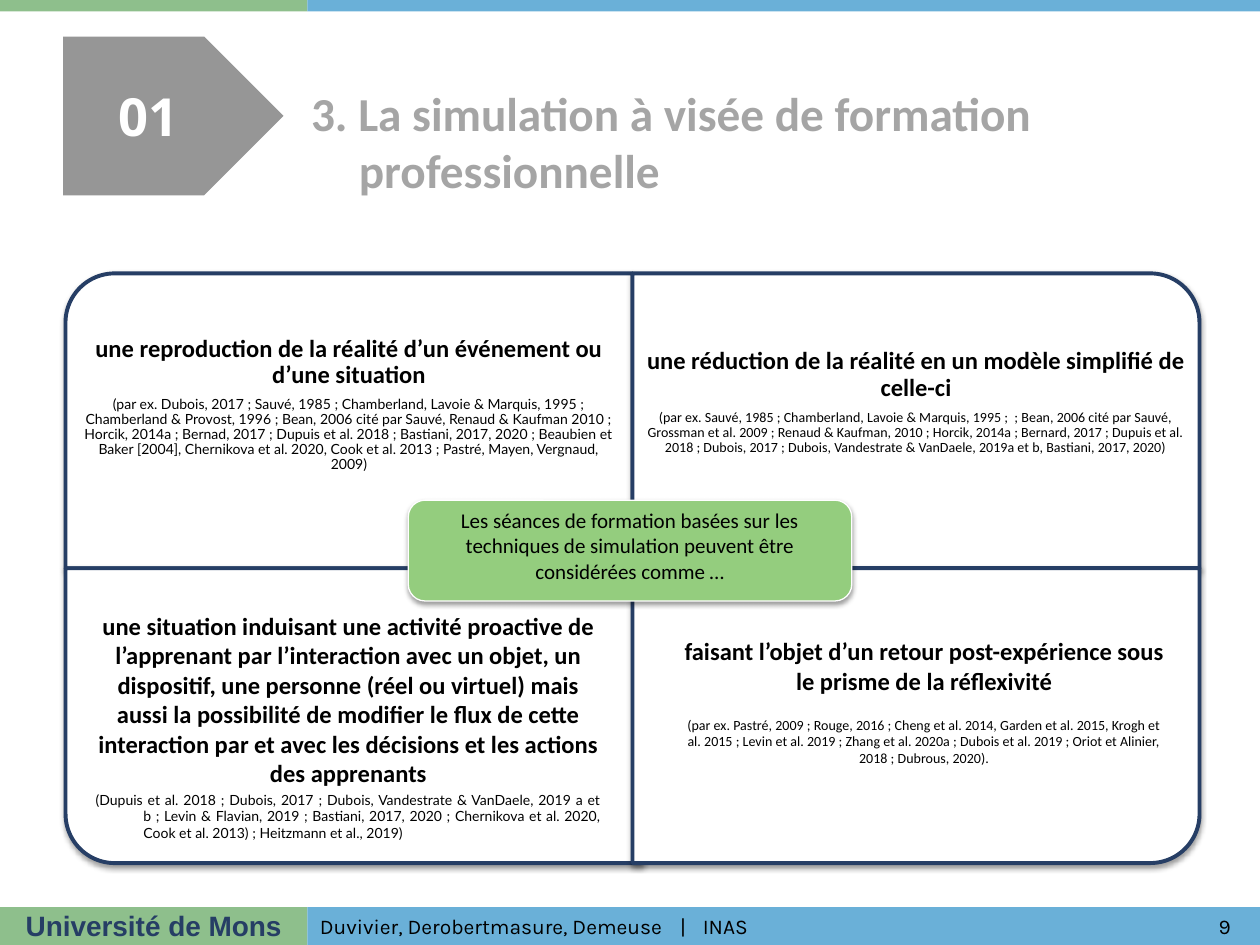
from dataclasses import dataclass

from lxml import etree
from pptx import Presentation
from pptx.dml.color import RGBColor
from pptx.enum.shapes import MSO_SHAPE
from pptx.enum.text import MSO_ANCHOR, PP_ALIGN
from pptx.oxml.ns import qn
from pptx.util import Inches, Pt

GREEN, BLUE, NAVY = "8EBF8C", "6AB0D8", "263E65"
BLACK, WHITE = "000000", "FFFFFF"
SPLIT, SLIDE_WIDTH = 2.44, 10
GRID_LEFT, GRID_TOP = 0.52, 2.17
PANEL_WIDTH, PANEL_HEIGHT = 4.5, 2.34
LEFT, CENTER, JUSTIFY = PP_ALIGN.LEFT, PP_ALIGN.CENTER, PP_ALIGN.JUSTIFY


@dataclass
class Box:
    left: float
    top: float
    width: float
    height: float

    def lengths(self):
        return [Inches(v) for v in (self.left, self.top, self.width, self.height)]


@dataclass
class Line:
    """One paragraph and its format; hang is the hanging indent in inches."""
    text: str
    size: float
    font: str = "Calibri"
    color: str = BLACK
    bold: bool = False
    align: PP_ALIGN = CENTER
    spacing: float = 1.0
    after: float = 0
    hang: float = 0
    tabs: tuple = ()


@dataclass
class Quadrant:
    column: int
    row: int
    rotation: int
    width: float = PANEL_WIDTH


def rgb(value: str) -> RGBColor:
    return RGBColor.from_string(value)


def add_shadow(shape) -> None:
    effects = etree.SubElement(shape._element.spPr, qn("a:effectLst"))
    shadow = etree.SubElement(effects, qn("a:outerShdw"), blurRad=str(Pt(3.1)),
                              dist=str(Pt(1.6)), dir="5400000", rotWithShape="0")
    color = etree.SubElement(shadow, qn("a:srgbClr"), val=BLACK)
    etree.SubElement(color, qn("a:alpha"), val="38000")


def add_block(slide, kind, box: Box, fill: str, line: str = "",
              line_width: float = 0, rotation: int = 0):
    """Draw a filled shape; an outlined one also casts a shadow."""
    shape = slide.shapes.add_shape(kind, *box.lengths())
    shape.fill.solid()
    shape.fill.fore_color.rgb = rgb(fill)
    shape.rotation = rotation
    if line:
        shape.line.color.rgb = rgb(line)
        shape.line.width = Pt(line_width)
        add_shadow(shape)
    else:
        shape.line.fill.background()
        shape.shadow.inherit = False
    return shape


def add_panel(slide, quadrant: Quadrant) -> None:
    """Draw a quadrant; a quarter turn swaps width and height about the centre."""
    width, height = quadrant.width, PANEL_HEIGHT
    center_x = GRID_LEFT + quadrant.column * PANEL_WIDTH + width / 2
    center_y = GRID_TOP + quadrant.row * PANEL_HEIGHT + height / 2
    if quadrant.rotation % 180:
        width, height = height, width
    box = Box(center_x - width / 2, center_y - height / 2, width, height)
    add_block(slide, MSO_SHAPE.ROUND_1_RECTANGLE, box, WHITE, NAVY, 2.25,
              quadrant.rotation)


def add_text(slide, box: Box, *lines: Line, anchor=MSO_ANCHOR.TOP,
             insets=(0.1, 0.05, 0.1, 0.05)) -> None:
    """Add a text box; insets are left, top, right and bottom."""
    frame = slide.shapes.add_textbox(*box.lengths()).text_frame
    frame.word_wrap = True
    frame.vertical_anchor = anchor
    (frame.margin_left, frame.margin_top,
     frame.margin_right, frame.margin_bottom) = map(Inches, insets)
    for index, line in enumerate(lines):
        paragraph = frame.add_paragraph() if index else frame.paragraphs[0]
        paragraph.alignment = line.align
        paragraph.line_spacing = line.spacing
        paragraph.space_after = Pt(line.after)
        properties = paragraph._p.get_or_add_pPr()
        if line.hang:
            properties.set("marL", str(Inches(line.hang)))
            properties.set("indent", str(-Inches(line.hang)))
        if line.tabs:
            stops = etree.SubElement(properties, qn("a:tabLst"))
            for position in line.tabs:
                etree.SubElement(stops, qn("a:tab"), pos=str(Inches(position)), algn="l")
        run = paragraph.add_run()
        run.text = line.text
        run.font.size = Pt(line.size)
        run.font.name = line.font
        run.font.bold = line.bold
        run.font.color.rgb = rgb(line.color)


def add_frame(slide) -> None:
    for top, height in ((0, 0.09), (7.2, 0.3)):
        add_block(slide, MSO_SHAPE.RECTANGLE, Box(0, top, SPLIT, height), GREEN)
        add_block(slide, MSO_SHAPE.RECTANGLE,
                  Box(SPLIT, top, SLIDE_WIDTH - SPLIT, height), BLUE)
    add_text(slide, Box(0, 7.16, SPLIT, 0.37),
             Line("Université de Mons", 16, "Arial", NAVY, True))
    add_text(slide, Box(9.44, 7.2, 0.56, 0.3), Line("9", 12, "Karla"),
             anchor=MSO_ANCHOR.MIDDLE)
    add_text(slide, Box(SPLIT, 7.2, 7, 0.3),
             Line("Duvivier, Derobertmasure, Demeuse\t|\tINAS", 12, "Karla",
                  align=LEFT, tabs=(2.86, 3.04)),
             anchor=MSO_ANCHOR.MIDDLE)


def add_header(slide) -> None:
    add_block(slide, MSO_SHAPE.PENTAGON, Box(0.5, 0.29, 1.75, 1.26), "969696")
    add_text(slide, Box(0.58, 0.62, 1.19, 0.61),
             Line("01", 30, "Open Sans", WHITE, True))
    add_text(slide, Box(2.37, 0.62, 6.81, 1.01),
             Line("3. La simulation à visée de formation professionnelle", 27,
                  color="A5A5A5", bold=True, align=LEFT, hang=0.38))


def add_quadrants(slide) -> None:
    for quadrant in (Quadrant(0, 0, 270), Quadrant(1, 0, 0),
                     Quadrant(0, 1, 180, 4.57), Quadrant(1, 1, 90)):
        add_panel(slide, quadrant)
    add_text(slide, Box(GRID_LEFT, GRID_TOP, PANEL_WIDTH, 1.76),
             Line("une reproduction de la réalité d’un événement ou d’une situation",
                  14, bold=True, spacing=0.9, after=5),
             Line("(par ex. Dubois, 2017 ; Sauvé, 1985 ; Chamberland, Lavoie & Marquis, 1995 ; "
                  "Chamberland & Provost, 1996 ; Bean, 2006 cité par Sauvé, Renaud & "
                  "Kaufman 2010 ; Horcik, 2014a ; Bernad, 2017 ; Dupuis et al. 2018 ; "
                  "Bastiani, 2017, 2020 ; Beaubien et Baker [2004], Chernikova et al. 2020, "
                  "Cook et al. 2013 ; Pastré, Mayen, Vergnaud, 2009)",
                  8, "Lato", spacing=0.9),
             anchor=MSO_ANCHOR.MIDDLE, insets=(0.12, 0.44, 0.12, 0.12))
    add_text(slide, Box(GRID_LEFT + PANEL_WIDTH, GRID_TOP, PANEL_WIDTH, 1.76),
             Line("une réduction de la réalité en un modèle simplifié de celle-ci",
                  14, bold=True, spacing=0.9, after=5),
             Line("(par ex. Sauvé, 1985 ; Chamberland, Lavoie & Marquis, 1995 ;  ; Bean, "
                  "2006 cité par Sauvé, Grossman et al. 2009 ; Renaud & Kaufman, 2010 ; "
                  "Horcik, 2014a ; Bernard, 2017 ; Dupuis et al. 2018 ; Dubois, 2017 ; "
                  "Dubois, Vandestrate & VanDaele, 2019a et b, Bastiani, 2017, 2020)",
                  8, spacing=0.9),
             anchor=MSO_ANCHOR.MIDDLE, insets=(0.11, 0.39, 0.11, 0.11))
    add_text(slide, Box(0.66, 4.8, 4.21, 1.48),
             Line("une situation induisant une activité proactive de l’apprenant par "
                  "l’interaction avec un objet, un dispositif, une personne (réel ou virtuel) "
                  "mais aussi la possibilité de modifier le flux de cette interaction par et "
                  "avec les décisions et les actions des apprenants", 14, bold=True, after=2),
             Line("(Dupuis et al. 2018 ; Dubois, 2017 ; Dubois, Vandestrate & VanDaele, "
                  "2019 a et b ; Levin & Flavian, 2019 ; Bastiani, 2017, 2020 ; Chernikova "
                  "et al. 2020, Cook et al. 2013) ; Heitzmann et al., 2019)",
                  8, "Lato", align=JUSTIFY, hang=0.38))
    add_text(slide, Box(5.33, 5, 4.01, 1.65),
             Line("faisant l’objet d’un retour post-expérience sous le prisme de la "
                  "réflexivité", 14, bold=True, after=12),
             Line("(par ex. Pastré, 2009 ; Rouge, 2016 ; Cheng et al. 2014, Garden et al. "
                  "2015, Krogh et al. 2015 ; Levin et al. 2019 ; Zhang et al. 2020a ; Dubois "
                  "et al. 2019 ; Oriot et Alinier, 2018 ; Dubrous, 2020).", 8))


def add_center_label(slide) -> None:
    add_block(slide, MSO_SHAPE.ROUNDED_RECTANGLE, Box(3.24, 3.97, 3.52, 0.8),
              "94CD7E", WHITE, 0.75)
    add_text(slide, Box(3.28, 4.01, 3.44, 0.72),
             Line("Les séances de formation basées sur les techniques de simulation "
                  "peuvent être considérées comme …", 12),
             anchor=MSO_ANCHOR.MIDDLE, insets=(0.05, 0.05, 0.05, 0.13))


def main() -> None:
    presentation = Presentation()
    presentation.slide_width = Inches(SLIDE_WIDTH)
    presentation.slide_height = Inches(7.5)
    slide = presentation.slides.add_slide(presentation.slide_layouts[6])
    add_frame(slide)
    add_quadrants(slide)
    add_center_label(slide)
    add_header(slide)
    presentation.save("out.pptx")


if __name__ == "__main__":
    main()
